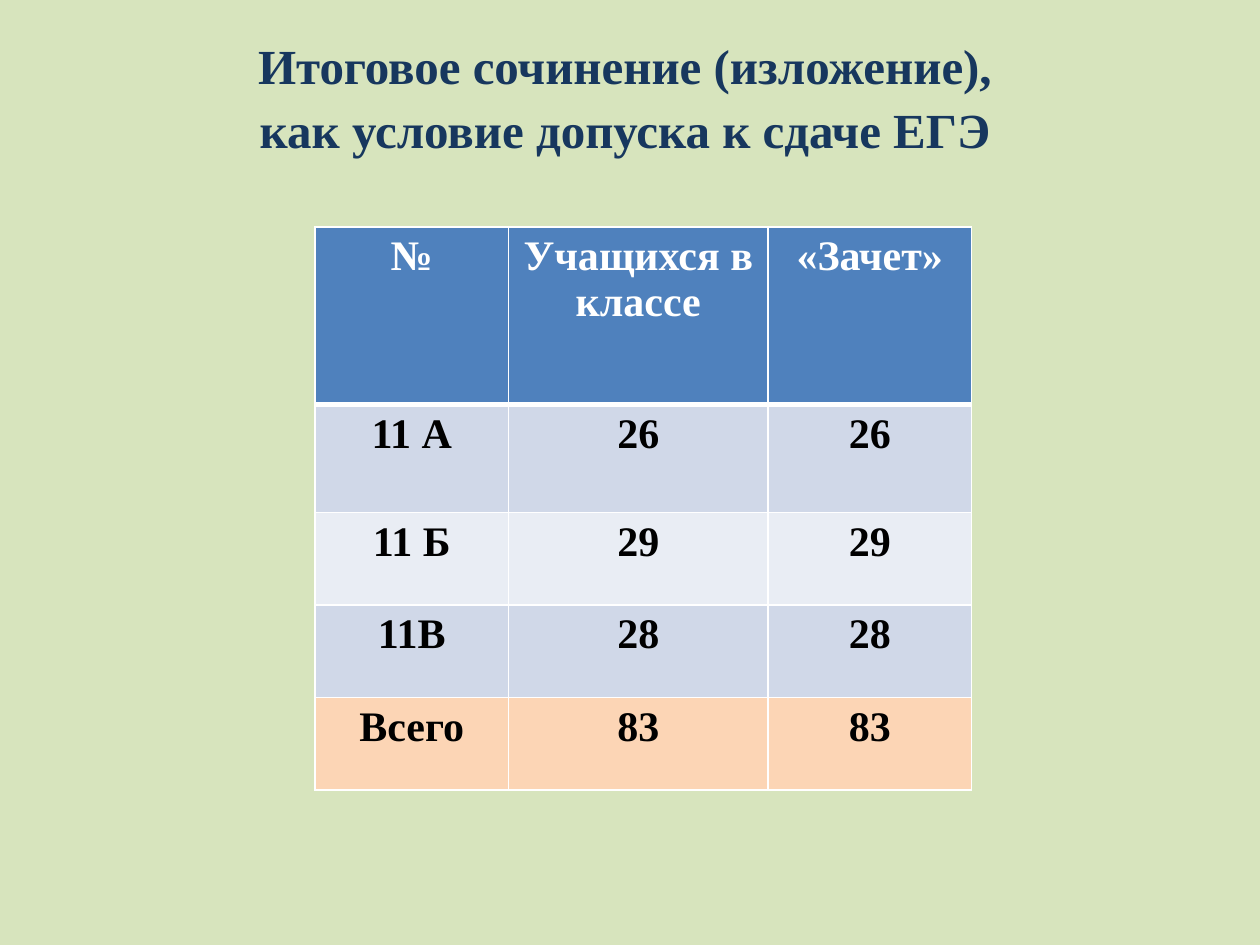
from pptx import Presentation
from pptx.dml.color import RGBColor
from pptx.enum.text import MSO_ANCHOR, PP_ALIGN
from pptx.oxml import parse_xml
from pptx.oxml.ns import nsdecls
from pptx.util import Pt

COLORS = {
    "background": "D7E4BD",
    "title": "17375E",
    "header": "4F81BD",
    "header_text": "FFFFFF",
    "band_dark": "D0D8E8",
    "band_light": "E9EDF4",
    "total": "FCD5B5",
    "text": "000000",
    "border": "FFFFFF",
}
TITLE = ["Итоговое сочинение (изложение),", "как условие допуска к сдаче ЕГЭ"]
RESULTS = [
    ["№", "Учащихся в классе", "«Зачет»"],
    ["11 А", "26", "26"],
    ["11 Б", "29", "29"],
    ["11В", "28", "28"],
    ["Всего", "83", "83"],
]
ROW_FILLS = ["header", "band_dark", "band_light", "band_dark", "total"]
COL_WIDTHS = [110.6, 148.3, 116.3]
ROW_HEIGHTS = [101.5, 61.9, 52.8, 52.8, 52.8]


def rgb(name):
    return RGBColor.from_string(COLORS[name])


class SlideBuilder:
    font = "Times New Roman"

    def __init__(self, prs):
        self.s = prs.slides.add_slide(prs.slide_layouts[5])
        fill = self.s.background.fill
        fill.solid()
        fill.fore_color.rgb = rgb("background")

    def format_text(self, tf, size, color):
        for p in tf.paragraphs:
            p.alignment = PP_ALIGN.CENTER
            for r in p.runs:
                r.font.name = self.font
                r.font.size = Pt(size)
                r.font.bold = True
                r.font.color.rgb = rgb(color)

    def title(self, lines, left, top, width, height):
        sp = self.s.shapes.title
        sp.left, sp.top, sp.width, sp.height = map(Pt, (left, top, width, height))
        tf = sp.text_frame
        tf.text = "\n".join(lines)
        tf.vertical_anchor = MSO_ANCHOR.MIDDLE
        self.format_text(tf, 28, "title")
        for p in tf.paragraphs:
            p.line_spacing = 1.09

    def borders(self, cell, bottom):
        """Draw white cell borders, with the given bottom width in points."""
        tcPr = cell._tc.get_or_add_tcPr()
        widths = {"lnL": 1, "lnR": 1, "lnT": 1, "lnB": bottom}
        for i, (side, width) in enumerate(widths.items()):
            tcPr.insert(i, parse_xml(
                f'<a:{side} {nsdecls("a")} w="{Pt(width)}"><a:solidFill>'
                f'<a:srgbClr val="{COLORS["border"]}"/></a:solidFill></a:{side}>'))

    def table(self, rows, left, top):
        frame = self.s.shapes.add_table(
            len(rows), len(rows[0]), Pt(left), Pt(top),
            Pt(sum(COL_WIDTHS)), Pt(sum(ROW_HEIGHTS)))
        table = frame.table
        for col, width in zip(table.columns, COL_WIDTHS):
            col.width = Pt(width)
        for i, (values, fill, height) in enumerate(zip(rows, ROW_FILLS, ROW_HEIGHTS)):
            table.rows[i].height = Pt(height)
            for j, value in enumerate(values):
                cell = table.cell(i, j)
                cell.text_frame.text = value
                self.format_text(cell.text_frame, 24, "text" if i else "header_text")
                cell.fill.solid()
                cell.fill.fore_color.rgb = rgb(fill)
                self.borders(cell, bottom=1 if i else 3)


def main():
    prs = Presentation()
    prs.slide_width, prs.slide_height = Pt(720), Pt(540)
    builder = SlideBuilder(prs)
    builder.title(TITLE, 22.3, 16.6, 669.6, 74.9)
    builder.table(RESULTS, 180, 129.6)
    prs.save("out.pptx")


if __name__ == "__main__":
    main()
